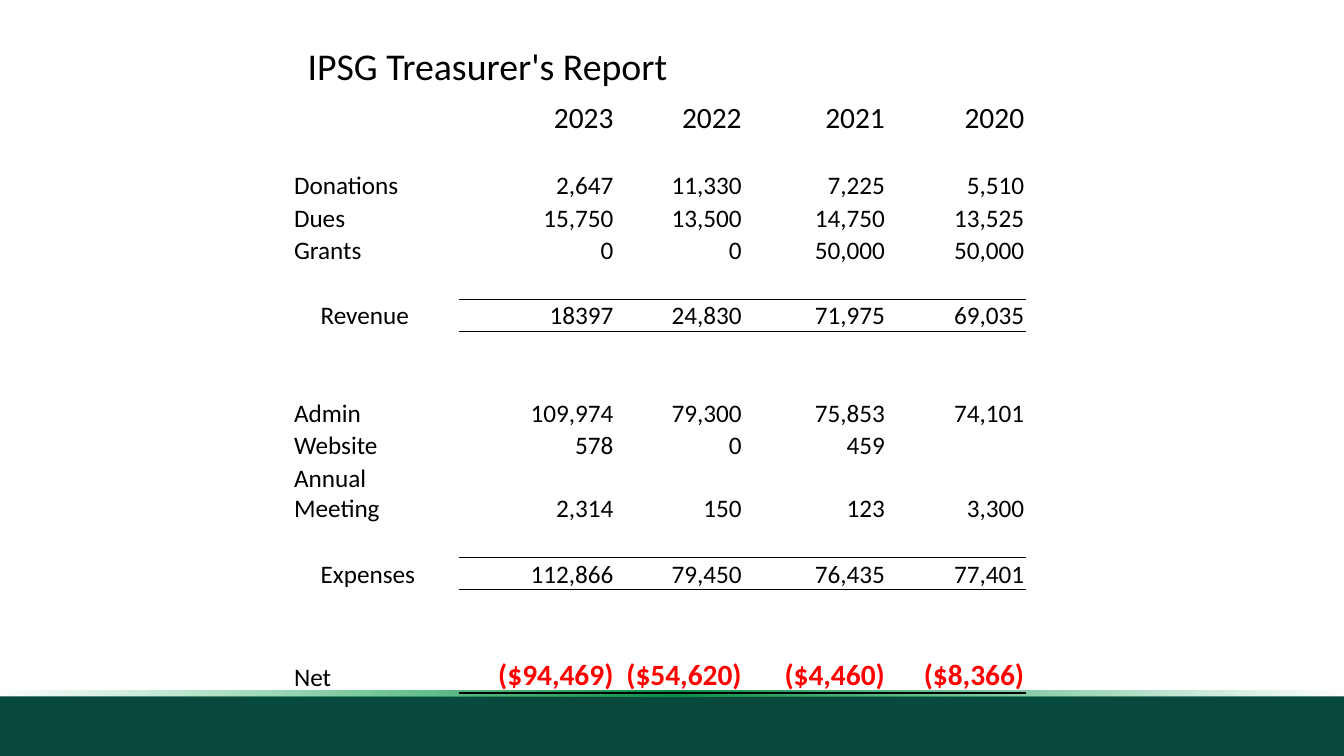
from lxml.etree import SubElement
from pptx import Presentation
from pptx.dml.color import RGBColor
from pptx.enum.shapes import MSO_SHAPE
from pptx.enum.text import MSO_ANCHOR, PP_ALIGN
from pptx.oxml import parse_xml
from pptx.oxml.ns import qn
from pptx.util import Cm, Pt

COLORS = {
    "text": "000000",
    "loss": "FF0000",
    "band": "07493C",
    "glow_start": "0D9D4F",
    "glow_middle": "0C9049",
    "glow_end": "0FAB56",
}
NO_STYLE_NO_GRID = "{2D5ABB26-0587-4C30-8999-92F81FD0307C}"
DRAWING_NS = "http://schemas.openxmlformats.org/drawingml/2006/main"

REPORT = [
    ["IPSG Treasurer's Report"],
    ["", "2023", "2022", "2021", "2020"],
    [],
    ["Donations", "2,647", "11,330", "7,225", "5,510"],
    ["Dues", "15,750", "13,500", "14,750", "13,525"],
    ["Grants", "0", "0", "50,000", "50,000"],
    [],
    ["Revenue", "18397", "24,830", "71,975", "69,035"],
    [],
    [],
    ["Admin", "109,974", "79,300", "75,853", "74,101"],
    ["Website", "578", "0", "459", ""],
    ["Annual Meeting", "2,314", "150", "123", "3,300"],
    [],
    ["Expenses", "112,866", "79,450", "76,435", "77,401"],
    [],
    ["Net", "($94,469)", "($54,620)", "($4,460)", "($8,366)"],
]
COLUMN_WIDTHS = [4.19, 3.94, 3.23, 3.61, 3.51]
ROW_HEIGHT = 0.82
SPECIAL_HEIGHTS = {"title": 1.47, "years": 0.97, "Annual Meeting": 1.52, "Net": 1.78}
TOTALS = ("Revenue", "Expenses")


def add_band(slide, top, height):
    band = slide.shapes.add_shape(MSO_SHAPE.RECTANGLE, 0, Cm(top), Cm(33.87), Cm(height))
    band.shadow.inherit = False
    band.line.fill.background()
    return band


def add_border(cell, edge, points):
    line = SubElement(cell._tc.get_or_add_tcPr(), qn(f"a:{edge}"), w=str(Pt(points)))
    fill = SubElement(line, qn("a:solidFill"))
    SubElement(fill, qn("a:srgbClr"), val=COLORS["text"])


prs = Presentation()
prs.slide_width = Cm(33.87)
prs.slide_height = Cm(19.05)
slide = prs.slides.add_slide(prs.slide_layouts[6])

footer = add_band(slide, 17.55, 1.5)
footer.fill.solid()
footer.fill.fore_color.rgb = RGBColor.from_string(COLORS["band"])

glow = add_band(slide, 17.4, 0.14)
glow.fill.background()
glow_properties = glow.element.spPr
glow_properties.replace(
    glow_properties.find(qn("a:noFill")),
    parse_xml(
        f'<a:gradFill xmlns:a="{DRAWING_NS}" rotWithShape="1"><a:gsLst>'
        f'<a:gs pos="0"><a:srgbClr val="{COLORS["glow_start"]}"><a:alpha val="0"/></a:srgbClr></a:gs>'
        f'<a:gs pos="50000"><a:srgbClr val="{COLORS["glow_middle"]}"/></a:gs>'
        f'<a:gs pos="100000"><a:srgbClr val="{COLORS["glow_end"]}"><a:alpha val="0"/></a:srgbClr></a:gs>'
        '</a:gsLst><a:lin ang="10800000" scaled="0"/></a:gradFill>'
    ),
)

report_frame = slide.shapes.add_table(
    len(REPORT), len(COLUMN_WIDTHS), Cm(7.37), Cm(0.94), Cm(sum(COLUMN_WIDTHS)), Cm(16.4)
)
report = report_frame.table
report.first_row = False
report.horz_banding = False
next(report_frame.element.iter(qn("a:tableStyleId"))).text = NO_STYLE_NO_GRID

for column, width in zip(report.columns, COLUMN_WIDTHS):
    column.width = Cm(width)

report.cell(0, 0).merge(report.cell(0, 3))

for row_index, entries in enumerate(REPORT):
    label = entries[0] if entries else ""
    kind = {0: "title", 1: "years"}.get(row_index, label)
    report.rows[row_index].height = Cm(SPECIAL_HEIGHTS.get(kind, ROW_HEIGHT))
    for column_index in range(len(COLUMN_WIDTHS)):
        cell = report.cell(row_index, column_index)
        is_amount = column_index > 0
        is_loss = is_amount and kind == "Net"
        cell.vertical_anchor = MSO_ANCHOR.BOTTOM
        cell.margin_left = cell.margin_right = cell.margin_top = Cm(0.04)
        cell.margin_bottom = 0
        if kind == "title":
            cell.margin_left = cell.margin_right = Cm(0.38)
            cell.margin_top = cell.margin_bottom = Cm(0.18)
        elif kind in TOTALS and not is_amount:
            cell.margin_left = Cm(0.71)

        if is_amount and kind in TOTALS:
            add_border(cell, "lnT", 0.5)
            add_border(cell, "lnB", 0.5)
        elif is_loss:
            add_border(cell, "lnB", 2)
        cell.fill.background()

        if column_index < len(entries):
            cell.text = entries[column_index]
        paragraph = cell.text_frame.paragraphs[0]
        paragraph.alignment = PP_ALIGN.RIGHT if is_amount else PP_ALIGN.LEFT
        paragraph.font.name = "Calibri"
        paragraph.font.size = Pt(18)
        if kind == "title":
            paragraph.font.size = Pt(27)
        elif kind == "years" or is_loss:
            paragraph.font.size = Pt(21)
        paragraph.font.bold = is_loss
        paragraph.font.color.rgb = RGBColor.from_string(COLORS["loss" if is_loss else "text"])

prs.save("out.pptx")
